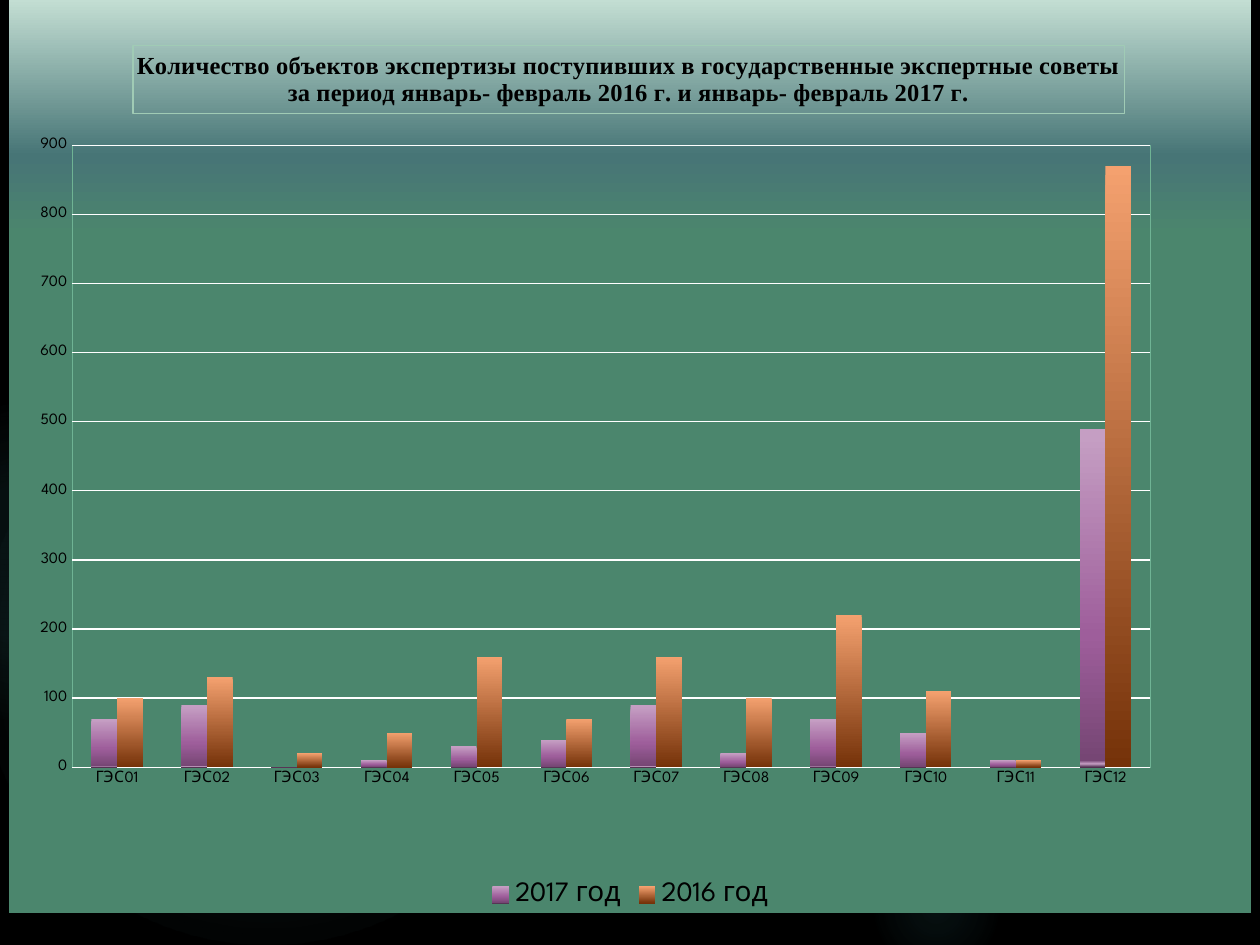
from dataclasses import dataclass
from typing import Optional

from lxml.etree import SubElement
from pptx import Presentation
from pptx.chart.data import CategoryChartData as ChartData
from pptx.dml.color import RGBColor as Rgb
from pptx.enum.chart import XL_CHART_TYPE as Kind, XL_LEGEND_POSITION as Side, XL_TICK_MARK as Tick
from pptx.enum.shapes import MSO_SHAPE as Form
from pptx.oxml import parse_xml
from pptx.oxml.ns import nsdecls, qn
from pptx.util import Inches, Pt


@dataclass(frozen=True)
class Stop:
    pos: int
    color: str
    alpha: int = 100


@dataclass(frozen=True)
class Glow:
    left: float
    top: float
    size: float
    stops: tuple[Stop, ...]


@dataclass(frozen=True)
class Row:
    name: str
    vals: tuple[int, ...]
    stops: tuple[Stop, ...]


@dataclass(frozen=True)
class Theme:
    back: str = "000000"
    ink: str = "000000"
    grid: str = "FFFFFF"
    edge: str = "6FB394"
    frame: str = "A0CBB5"
    glow: str = "50B9C1"
    font: str = "League Spartan"
    head: str = "Times New Roman"
    tick: float = 9
    body: float = 10
    title: float = 14
    key: float = 16
    thin: float = 0.75


THEME = Theme()
PANEL = (Stop(0, "4B866D"), Stop(74, "4B866D"), Stop(83, "477576"), Stop(100, "C3DED3"))
TITLE = (
    "Количество объектов экспертизы поступивших в государственные экспертные советы",
    "за период январь- февраль 2016 г. и январь- февраль 2017 г.",
)
ROWS = (
    Row("2017 год", (70, 90, 0, 10, 30, 40, 90, 20, 70, 50, 10, 490),
        (Stop(2, "C59EC3"), Stop(61, "9E5E9B"), Stop(98, "764674"),
         Stop(99, "C59EC3"), Stop(100, "4F2F4E"))),
    Row("2016 год", (100, 130, 20, 50, 160, 70, 160, 100, 220, 110, 10, 870),
        (Stop(0, "F4A16F"), Stop(100, "753209"))),
)


def haze(core: int, mid: int, end: int) -> tuple[Stop, ...]:
    """Return the stops of a glow that fades out at the given percent."""
    return Stop(0, THEME.glow, core), Stop(36, THEME.glow, mid), Stop(end, THEME.glow, 0)


GLOWS = (
    Glow(6.89, 6.67, 1.08, haze(9, 5, 66)),
    Glow(-0.17, 2.92, 4.58, haze(11, 10, 75)),
    Glow(-0.92, 3.17, 2.58, haze(8, 8, 72)),
)


def shade(props, stops: tuple[Stop, ...], angle: Optional[int] = None) -> None:
    """Put a gradient before the line; it is radial when no angle is given."""
    grad = parse_xml(f'<a:gradFill {nsdecls("a")} rotWithShape="1"><a:gsLst/></a:gradFill>')
    for stop in stops:
        mark = SubElement(grad[0], qn("a:gs"), pos=str(stop.pos * 1000))
        color = SubElement(mark, qn("a:srgbClr"), val=stop.color)
        if stop.alpha < 100:
            SubElement(color, qn("a:alpha"), val=str(stop.alpha * 1000))
    if angle is None:
        path = SubElement(grad, qn("a:path"), path="circle")
        SubElement(path, qn("a:fillToRect"), l="50000", t="50000", r="50000", b="50000")
    else:
        SubElement(grad, qn("a:lin"), ang=str(angle * 60000), scaled="0")
    props.find(qn("a:ln")).addprevious(grad)


def place(node, index: int, **marks: object) -> None:
    """Give a chart part a manual layout."""
    old = node.find(qn("c:layout"))
    if old is not None:
        node.remove(old)
    layout = parse_xml(f'<c:layout {nsdecls("c")}><c:manualLayout/></c:layout>')
    for tag, val in marks.items():
        SubElement(layout[0], qn(f"c:{tag}"), val=str(val))
    node.insert(index, layout)


def outline(color: Optional[str] = None):
    """Return chart shape properties with a thin line or none."""
    paint = f'<a:solidFill><a:srgbClr val="{color}"/></a:solidFill>' if color else "<a:noFill/>"
    width = Pt(THEME.thin)
    return parse_xml(f'<c:spPr {nsdecls("c", "a")}><a:ln w="{width}">{paint}</a:ln></c:spPr>')


def style(font, size: float, color: str = THEME.ink, face: str = THEME.font,
          bold: bool = False) -> None:
    """Set the look of a font."""
    font.size, font.name, font.bold = Pt(size), face, bold
    font.color.rgb = Rgb.from_string(color)


def draw_glow(slide, glow: Glow) -> None:
    """Draw one soft round glow."""
    spot = slide.shapes.add_shape(
        Form.OVAL, Inches(glow.left), Inches(glow.top), Inches(glow.size), Inches(glow.size))
    spot.shadow.inherit = False
    spot.line.fill.background()
    shade(spot._element.spPr, glow.stops)


def draw_title(chart) -> None:
    """Write the framed chart title."""
    chart.has_title = True
    title = chart.chart_title
    frame = title.text_frame
    frame.text = "\n".join(TITLE)
    for para in frame.paragraphs:
        for run in para.runs:
            style(run.font, THEME.title, face=THEME.head, bold=True)
    title.format.line.color.rgb = Rgb.from_string(THEME.frame)
    title.format.line.width = Pt(THEME.thin)
    place(title._element, 1, xMode="edge", yMode="edge", x=0.1, y=0.05)


def draw_axes(chart) -> None:
    """Format both axes and the grid."""
    for axis in (chart.category_axis, chart.value_axis):
        axis.major_tick_mark = axis.minor_tick_mark = Tick.NONE
        axis.format.line.fill.background()
        style(axis.tick_labels.font, THEME.tick)
    scale = chart.value_axis
    scale.minimum_scale, scale.maximum_scale, scale.major_unit = 0, 900, 100
    scale.has_major_gridlines = True
    grid = scale.major_gridlines.format.line
    grid.color.rgb = Rgb.from_string(THEME.grid)
    grid.width = Pt(THEME.thin)


def draw_chart(slide) -> None:
    """Build the column chart."""
    data = ChartData()
    data.categories = [f"ГЭС{num:02}" for num in range(1, 13)]
    for row in ROWS:
        data.add_series(row.name, row.vals)
    chart = slide.shapes.add_chart(
        Kind.COLUMN_CLUSTERED, Inches(0.07), Inches(0), Inches(9.86), Inches(7.25), data).chart
    style(chart.font, THEME.body, THEME.grid)
    draw_title(chart)
    draw_axes(chart)

    plot = chart.plots[0]
    plot.gap_width, plot.overlap, plot.vary_by_categories = 150, 0, False
    for item, row in zip(plot.series, ROWS):
        item.format.line.fill.background()
        shade(item._element.find(qn("c:spPr")), row.stops, 90)

    chart.has_legend = True
    chart.legend.position = Side.BOTTOM
    chart.legend.include_in_layout = False
    style(chart.legend.font, THEME.key)

    body = chart._chartSpace.find(qn("c:chart"))
    area = body.find(qn("c:plotArea"))
    place(area, 0, layoutTarget="inner", xMode="edge", yMode="edge",
          x=0.051, y=0.159, w=0.868, h=0.681)
    area.append(outline(THEME.edge))
    panel = outline()
    shade(panel, PANEL, 270)
    body.addnext(panel)


def main() -> None:
    """Build and save the slide."""
    deck = Presentation()
    deck.slide_width, deck.slide_height = Inches(10), Inches(7.5)
    slide = deck.slides.add_slide(deck.slide_layouts[6])
    back = slide.background.fill
    back.solid()
    back.fore_color.rgb = Rgb.from_string(THEME.back)
    for glow in GLOWS:
        draw_glow(slide, glow)
    draw_chart(slide)
    deck.save("out.pptx")


if __name__ == "__main__":
    main()
